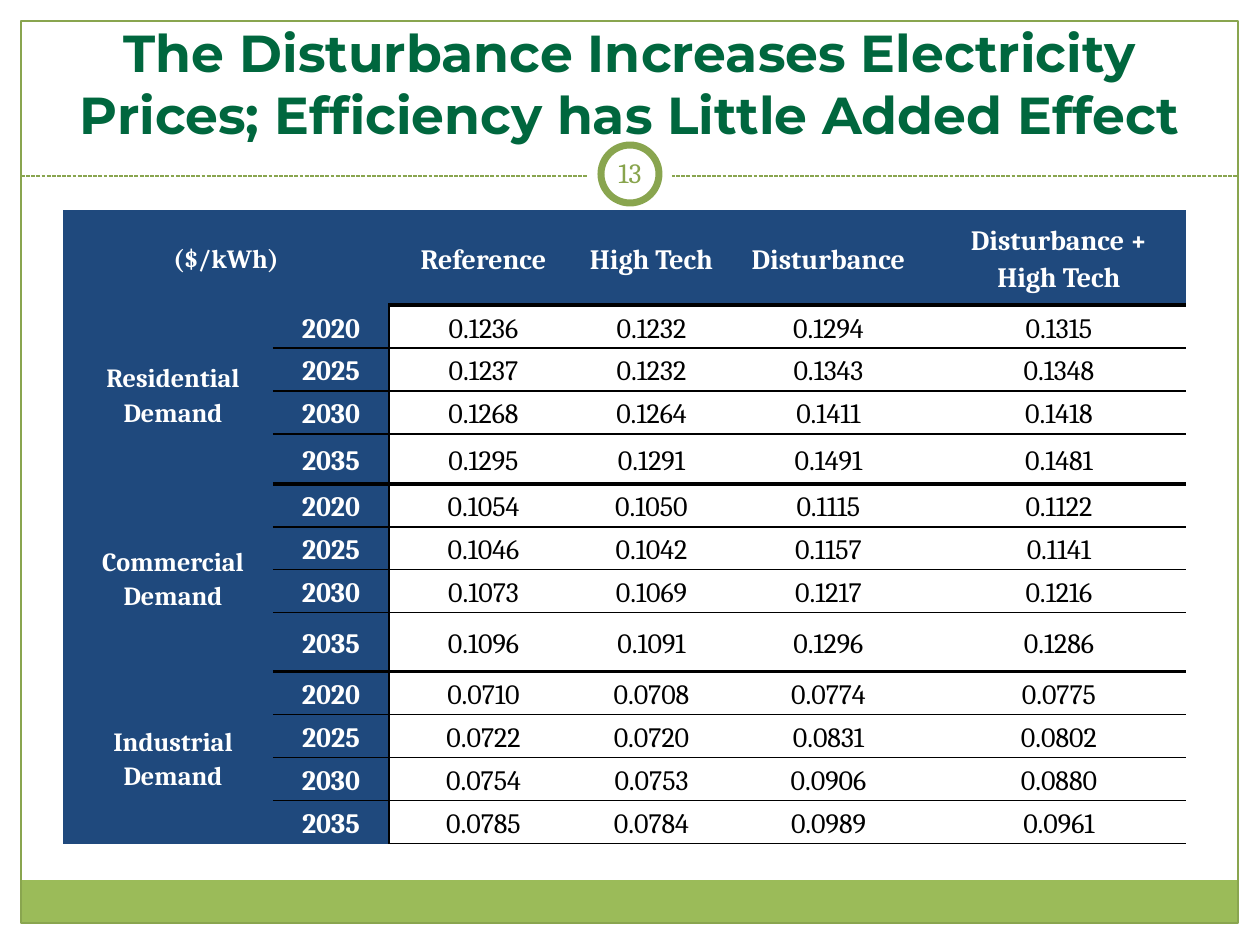
import pptx
import pptx.dml.color
import pptx.enum.dml
import pptx.enum.shapes
import pptx.enum.text
import pptx.oxml.ns
import pptx.util
from lxml import etree

PX = 914400 / 126
SHAPE = pptx.enum.shapes.MSO_SHAPE
MIDDLE = pptx.enum.text.MSO_ANCHOR.MIDDLE
BOTTOM = pptx.enum.text.MSO_ANCHOR.BOTTOM
GREEN, RULE, BLUE = "9BBB59", "89A54F", "1F497D"
HEADERS = ["Reference", "High Tech", "Disturbance", "Disturbance + High Tech"]
PRICES = {
    "Residential Demand": [
        ("2020", "0.1236", "0.1232", "0.1294", "0.1315"),
        ("2025", "0.1237", "0.1232", "0.1343", "0.1348"),
        ("2030", "0.1268", "0.1264", "0.1411", "0.1418"),
        ("2035", "0.1295", "0.1291", "0.1491", "0.1481"),
    ],
    "Commercial Demand": [
        ("2020", "0.1054", "0.1050", "0.1115", "0.1122"),
        ("2025", "0.1046", "0.1042", "0.1157", "0.1141"),
        ("2030", "0.1073", "0.1069", "0.1217", "0.1216"),
        ("2035", "0.1096", "0.1091", "0.1296", "0.1286"),
    ],
    "Industrial Demand": [
        ("2020", "0.0710", "0.0708", "0.0774", "0.0775"),
        ("2025", "0.0722", "0.0720", "0.0831", "0.0802"),
        ("2030", "0.0754", "0.0753", "0.0906", "0.0880"),
        ("2035", "0.0785", "0.0784", "0.0989", "0.0961"),
    ],
}
COLS = [210, 116, 189, 147, 207, 254]
ROWS = [95, 43, 43, 43, 50, 43, 43, 43, 59, 43, 43, 43, 43]


def px(n):
    """Turn px into EMU."""
    return pptx.util.Emu(round(n * PX))


def color(value):
    """Turn a hex string into a colour."""
    return pptx.dml.color.RGBColor.from_string(value)


def add_shape(s, kind, x, y, w, h, fill=None, line=None, width=0.75):
    """Add a flat preset shape."""
    sp = s.shapes.add_shape(kind, px(x), px(y), px(w), px(h))
    sp.shadow.inherit = False
    if fill:
        sp.fill.solid()
        sp.fill.fore_color.rgb = color(fill)
    else:
        sp.fill.background()
    if line:
        sp.line.color.rgb = color(line)
        sp.line.width = pptx.util.Pt(width)
    else:
        sp.line.fill.background()
    return sp


def write(tf, text, size, font, ink, bold=False):
    """Write one centred paragraph and return it."""
    p = tf.paragraphs[0]
    p.alignment = pptx.enum.text.PP_ALIGN.CENTER
    r = p.add_run()
    r.text = text
    r.font.size = pptx.util.Pt(size)
    r.font.name = font
    r.font.bold = bold
    r.font.color.rgb = color(ink)
    return p


def add_text(s, x, y, w, h, text, size, font, ink, bold, anchor, inset):
    """Add a wrapping text box."""
    tf = s.shapes.add_textbox(px(x), px(y), px(w), px(h)).text_frame
    tf.word_wrap = True
    tf.vertical_anchor = anchor
    tf.margin_left = tf.margin_right = px(inset)
    tf.margin_top = tf.margin_bottom = px(6)
    write(tf, text, size, font, ink, bold)


def frame(s, x, y, w, h):
    """Draw the page frame, its bottom band and the dashed rule."""
    add_shape(s, SHAPE.RECTANGLE, x, y + h - 43, w, 43, GREEN)
    add_shape(s, SHAPE.RECTANGLE, x, y, w, h, line=RULE)
    rule = s.shapes.add_connector(
        pptx.enum.shapes.MSO_CONNECTOR.STRAIGHT,
        px(x), px(y + 155), px(x + w), px(y + 155))
    rule.line.color.rgb = color(RULE)
    rule.line.width = pptx.util.Pt(0.75)
    rule.line.dash_style = pptx.enum.dml.MSO_LINE.SQUARE_DOT
    etree.SubElement(rule.element.spPr, pptx.oxml.ns.qn("a:effectLst"))


def page_badge(s, x, y, size, number):
    """Draw the ringed page number."""
    add_shape(s, SHAPE.OVAL, x, y, size, size, "FFFFFF")
    add_shape(s, SHAPE.OVAL, x + 13, y + 13, size - 26, size - 26, "FFFFFF", RULE, 4)
    add_text(s, x + 10, y + 10, size - 20, size - 23, number, 16, "Cambria",
             "88A44D", False, MIDDLE, 6)


def set_borders(cell, widths):
    """Set the four cell borders, leaving out sides without a width."""
    tc_pr = cell._tc.get_or_add_tcPr()
    for side in "LRTB":
        ln = etree.SubElement(tc_pr, pptx.oxml.ns.qn("a:ln" + side))
        if side in widths:
            ln.set("w", str(pptx.util.Pt(widths[side])))
            fill = etree.SubElement(ln, pptx.oxml.ns.qn("a:solidFill"))
            etree.SubElement(fill, pptx.oxml.ns.qn("a:srgbClr"), val="000000")
        else:
            etree.SubElement(ln, pptx.oxml.ns.qn("a:noFill"))


def borders_at(row, col):
    """Return the border widths by side for a grid position."""
    def edge(n):
        return 2.25 if n % 4 == 0 and n < 12 else 1

    widths = {}
    if col > 1 or (col == 1 and row > 1):
        if row > 0:
            widths["T"] = edge(row - 1)
        if col > 1 or row < 12:
            widths["B"] = edge(row)
    if row > 0 and col in (1, 2):
        widths["R" if col == 1 else "L"] = 1
    return widths


def fill_cell(cell, text, size, heading):
    """Write a table cell."""
    cell.vertical_anchor = MIDDLE
    cell.margin_left = cell.margin_right = px(9)
    cell.margin_top = cell.margin_bottom = 0
    ink = "FFFFFF" if heading else "000000"
    p = write(cell.text_frame, text, size, "Cambria", ink, heading)
    p.line_spacing = 1.15
    return p


def price_table(s, x, y, w, h):
    """Build the price table with its merged row groups."""
    table = s.shapes.add_table(len(ROWS), len(COLS), px(x), px(y), px(w), px(h)).table
    table.first_row = table.horz_banding = False
    for i, width in enumerate(COLS):
        table.columns[i].width = px(width)
    for i, height in enumerate(ROWS):
        table.rows[i].height = px(height)
        for j in range(len(COLS)):
            cell = table.cell(i, j)
            set_borders(cell, borders_at(i, j))
            if i == 0 or j < 2:
                cell.fill.solid()
                cell.fill.fore_color.rgb = color(BLUE)
            else:
                cell.fill.background()
    table.cell(0, 0).merge(table.cell(0, 1))
    fill_cell(table.cell(0, 0), "($/kWh)", 15, True)
    for j, text in enumerate(HEADERS, 2):
        fill_cell(table.cell(0, j), text, 16, True)
    for g, (name, rows) in enumerate(PRICES.items()):
        top = 1 + 4 * g
        table.cell(top, 0).merge(table.cell(top + 3, 0))
        p = fill_cell(table.cell(top, 0), name, 15, True)
        p._p.get_or_add_pPr().set("marL", str(px(10)))
        for i, values in enumerate(rows, top):
            for j, text in enumerate(values, 1):
                fill_cell(table.cell(i, j), text, 16, j == 1)


def main():
    """Build and save the slide."""
    prs = pptx.Presentation()
    prs.slide_width, prs.slide_height = px(1260), px(945)
    s = prs.slides.add_slide(prs.slide_layouts[6])
    frame(s, 21, 21, 1217, 902)
    page_badge(s, 588, 132, 84, "13")
    add_text(s, 21, 31, 1218, 120,
             "The Disturbance Increases Electricity Prices; Efficiency has Little Added Effect",
             29.7, "Montserrat", "00673E", True, BOTTOM, 13)
    price_table(s, 63, 210, sum(COLS), sum(ROWS))
    prs.save("out.pptx")


if __name__ == "__main__":
    main()
